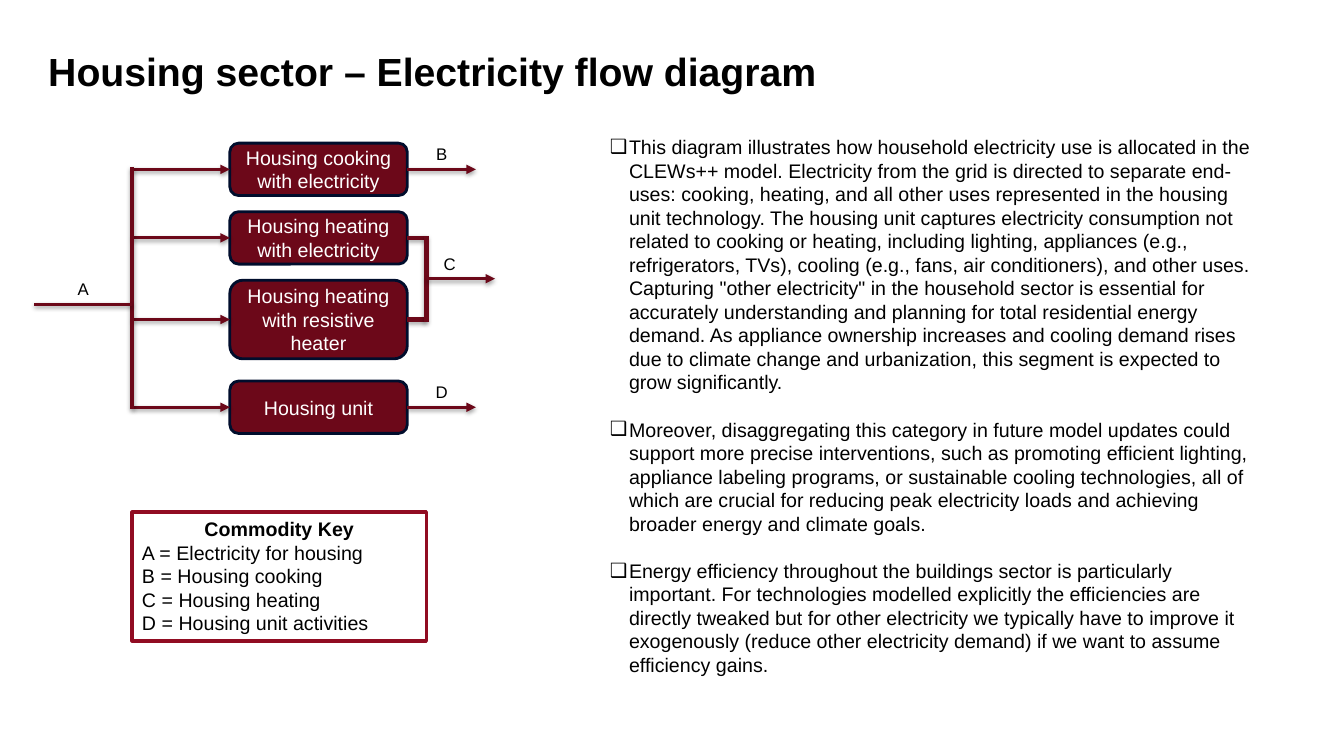
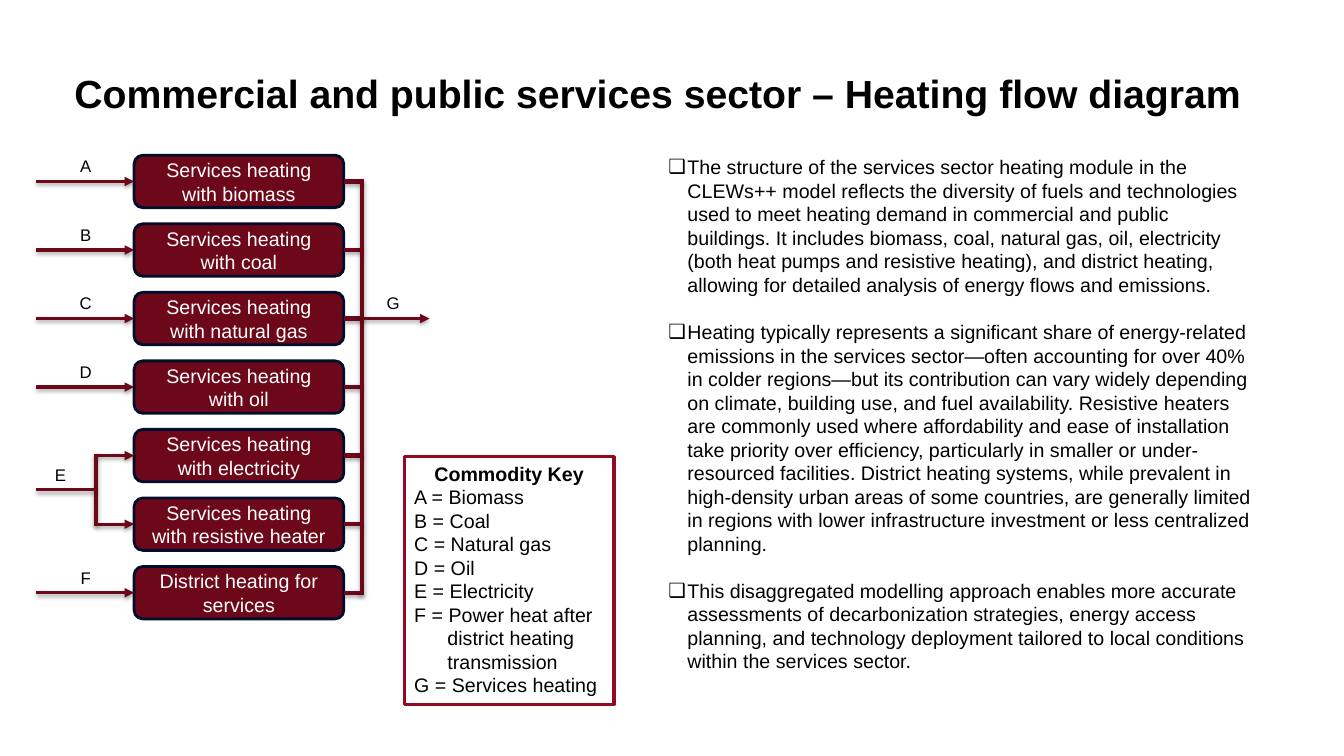
from lxml import etree
from pptx import Presentation
from pptx.dml.color import RGBColor
from pptx.enum.shapes import MSO_CONNECTOR, MSO_SHAPE
from pptx.enum.text import MSO_ANCHOR, PP_ALIGN
from pptx.oxml import parse_xml
from pptx.oxml.ns import nsdecls, qn
from pptx.util import Inches, Pt

STRAIGHT = MSO_CONNECTOR.STRAIGHT
RECT, ROUNDED = MSO_SHAPE.RECTANGLE, MSO_SHAPE.ROUNDED_RECTANGLE
LEFT, CENTER = PP_ALIGN.LEFT, PP_ALIGN.CENTER
TOP, MIDDLE, BOTTOM = MSO_ANCHOR.TOP, MSO_ANCHOR.MIDDLE, MSO_ANCHOR.BOTTOM
LEFT_SIDE, RIGHT_SIDE = 1, 3

FONT = "Arial"
BLACK, WHITE = "000000", "FFFFFF"
MAROON, NAVY, CRIMSON = "6C0819", "000D2C", "910C22"
THIN, THICK = 2.25, 3
BOX_HEIGHT, PITCH = 0.52, 0.68
LABEL_WIDTH, LABEL_HEIGHT = 0.72, 0.3
BULLET_INDENT, KEY_INDENT = 0.19, 0.33
PARAGRAPH_GAP = 16.8

HOUSING = {
    "title": ("Housing sector – Electricity flow diagram", (0.38, 0.16, 11.78, 0.83)),
    "notes_at": (5.95, 1.29, 6.69, 5.29),
    "notes": [
        "This diagram illustrates how household electricity use is allocated in the "
        "CLEWs++ model. Electricity from the grid is directed to separate end-uses: "
        "cooking, heating, and all other uses represented in the housing unit "
        "technology. The housing unit captures electricity consumption not related to "
        "cooking or heating, including lighting, appliances (e.g., refrigerators, TVs), "
        "cooling (e.g., fans, air conditioners), and other uses. Capturing \"other "
        "electricity\" in the household sector is essential for accurately "
        "understanding and planning for total residential energy demand. As appliance "
        "ownership increases and cooling demand rises due to climate change and "
        "urbanization, this segment is expected to grow significantly.",
        "Moreover, disaggregating this category in future model updates could support "
        "more precise interventions, such as promoting efficient lighting, appliance "
        "labeling programs, or sustainable cooling technologies, all of which are "
        "crucial for reducing peak electricity loads and achieving broader energy and "
        "climate goals.",
        "Energy efficiency throughout the buildings sector is particularly important. "
        "For technologies modelled explicitly the efficiencies are directly tweaked but "
        "for other electricity we typically have to improve it exogenously (reduce "
        "other electricity demand) if we want to assume efficiency gains.",
    ],
    "key_at": (1.31, 5.08, 2.92, 1.28),
    "key": ["A = Electricity for housing", "B = Housing cooking",
            "C = Housing heating", "D = Housing unit activities"],
    "boxes_at": (2.28, 1.76),
    "boxes": [  # label, top, height
        ("Housing cooking with electricity", 1.42, BOX_HEIGHT),
        ("Housing heating with electricity", 2.1, BOX_HEIGHT),
        ("Housing heating with resistive heater", 2.78, 0.78),
        ("Housing unit", 3.78, BOX_HEIGHT),
    ],
}

SERVICE_LABELS = [
    "Services heating with biomass", "Services heating with coal",
    "Services heating with natural gas", "Services heating with oil",
    "Services heating with electricity", "Services heating with resistive heater",
    "District heating for services",
]
SERVICES = {
    "title": ("Commercial and public services sector – Heating flow diagram",
              (0.64, 0.12, 11.91, 1.09)),
    "notes_at": (6.53, 1.49, 6.02, 5.29),
    "notes": [
        "The structure of the services sector heating module in the CLEWs++ model "
        "reflects the diversity of fuels and technologies used to meet heating demand "
        "in commercial and public buildings. It includes biomass, coal, natural gas, "
        "oil, electricity (both heat pumps and resistive heating), and district "
        "heating, allowing for detailed analysis of energy flows and emissions.",
        "Heating typically represents a significant share of energy-related emissions "
        "in the services sector—often accounting for over 40% in colder regions—but its "
        "contribution can vary widely depending on climate, building use, and fuel "
        "availability. Resistive heaters are commonly used where affordability and ease "
        "of installation take priority over efficiency, particularly in smaller or "
        "under-resourced facilities. District heating systems, while prevalent in "
        "high-density urban areas of some countries, are generally limited in regions "
        "with lower infrastructure investment or less centralized planning.",
        "This disaggregated modelling approach enables more accurate assessments of "
        "decarbonization strategies, energy access planning, and technology deployment "
        "tailored to local conditions within the services sector.",
    ],
    "key_at": (4.01, 4.53, 2.08, 2.46),
    "key": ["A = Biomass", "B = Coal", "C = Natural gas", "D = Oil", "E = Electricity",
            "F = Power heat after district heating transmission",
            "G = Services heating"],
    "boxes_at": (1.33, 2.08),
    "boxes": [(label, 1.54 + PITCH * row, BOX_HEIGHT)
              for row, label in enumerate(SERVICE_LABELS)],
}


def rgb(code):
    return RGBColor.from_string(code)


def inches(values):
    return [Inches(value) for value in values]


def hang(paragraph, indent, bullet=None):
    """Give a paragraph a hanging indent and, if asked, a bullet."""
    properties = paragraph._p.get_or_add_pPr()
    properties.set("marL", str(Inches(indent)))
    properties.set("indent", str(-Inches(indent)))
    if bullet:
        color = etree.SubElement(properties, qn("a:buClr"))
        etree.SubElement(color, qn("a:srgbClr"), val=BLACK)
        etree.SubElement(properties, qn("a:buFont"), typeface=FONT)
        etree.SubElement(properties, qn("a:buChar"), char=bullet)


def write(frame, lines, size=14, color=BLACK, bold=False, align=LEFT, anchor=TOP,
          spacing=None, gap=0, indent=0, bullet=None, heading=None):
    """Fill a text frame, one paragraph a line, below an optional bold heading."""
    frame.word_wrap = True
    frame.vertical_anchor = anchor
    rows = ([heading] if heading else []) + list(lines)
    for number, line in enumerate(rows):
        is_heading = bool(heading) and number == 0
        paragraph = frame.add_paragraph() if number else frame.paragraphs[0]
        if indent and not is_heading:
            hang(paragraph, indent, bullet)
        paragraph.alignment = CENTER if is_heading else align
        if spacing:
            paragraph.line_spacing = spacing
        if gap and number:
            paragraph.space_before = Pt(gap)
        run = paragraph.add_run()
        run.text = line
        run.font.name, run.font.size = FONT, Pt(size)
        run.font.bold = bold or is_heading
        run.font.color.rgb = rgb(color)


def add_text(slide, area, lines, **style):
    write(slide.shapes.add_textbox(*inches(area)).text_frame, lines, **style)


def add_panel(slide, kind, area, lines, line, width, fill=None, **style):
    panel = slide.shapes.add_shape(kind, *inches(area))
    panel.shadow.inherit = False
    if fill:
        panel.fill.solid()
        panel.fill.fore_color.rgb = rgb(fill)
    else:
        panel.fill.background()
    panel.line.color.rgb = rgb(line)
    panel.line.width = Pt(width)
    write(panel.text_frame, lines, **style)
    return panel


def middle(box):
    return (box.top + box.height / 2) / Inches(1)


def right(box):
    return (box.left + box.width) / Inches(1)


def add_line(slide, start, end, width=THIN, arrow=False, source=None, target=None):
    """Draw a shadowed line, joined to a source's right or a target's left side."""
    line = slide.shapes.add_connector(STRAIGHT, *inches(start + end))
    if source is not None:
        line.begin_connect(source, RIGHT_SIDE)
    if target is not None:
        line.end_connect(target, LEFT_SIDE)
    line.line.color.rgb = rgb(MAROON)
    line.line.width = Pt(width)
    properties = line._element.spPr
    if arrow:
        etree.SubElement(properties.find(qn("a:ln")), qn("a:tailEnd"), type="triangle")
    properties.append(parse_xml(
        f'<a:effectLst {nsdecls("a")}><a:outerShdw blurRad="40000" dist="20000" '
        f'dir="5400000" rotWithShape="0"><a:srgbClr val="{BLACK}">'
        '<a:alpha val="37000"/></a:srgbClr></a:outerShdw></a:effectLst>'))


def add_spine(slide, x, first, last):
    """Draw a vertical line that covers the corners of its outer branches."""
    overhang = 0.02
    add_line(slide, (x, first - overhang), (x, last + overhang), THICK)


def add_label(slide, letter, center, y):
    area = (center - LABEL_WIDTH / 2, y - LABEL_HEIGHT, LABEL_WIDTH, LABEL_HEIGHT)
    add_text(slide, area, [letter], size=12, align=CENTER)


def feed(slide, x, box):
    add_line(slide, (x, middle(box)), (right(box), middle(box)), arrow=True, target=box)


def gather(slide, boxes, x):
    """Join the right sides of several boxes to one spine."""
    for box in boxes:
        add_line(slide, (right(box), middle(box)), (x, middle(box)), THICK, source=box)
    add_spine(slide, x, middle(boxes[0]), middle(boxes[-1]))


def add_base(deck, content):
    """Add a slide with title, notes, key and boxes; return it with its boxes."""
    slide = deck.slides.add_slide(deck.slide_layouts[6])
    title, title_at = content["title"]
    add_text(slide, title_at, [title], size=28, bold=True, anchor=BOTTOM, spacing=0.9)
    add_text(slide, content["notes_at"], content["notes"], gap=PARAGRAPH_GAP,
             indent=BULLET_INDENT, bullet="❑")
    add_panel(slide, RECT, content["key_at"], content["key"], CRIMSON, 2.25,
              heading="Commodity Key", indent=KEY_INDENT)
    left, width = content["boxes_at"]
    boxes = [add_panel(slide, ROUNDED, (left, top, width, height), [label], NAVY, 2,
                       fill=MAROON, color=WHITE, align=CENTER, anchor=MIDDLE)
             for label, top, height in content["boxes"]]
    return slide, boxes


def build_housing(deck):
    slide, boxes = add_base(deck, HOUSING)
    cooking, *heating, unit = boxes
    supply, trunk, supply_y, outlet = 0.34, 1.31, 3.02, 0.68
    for box in boxes:
        feed(slide, trunk, box)
    add_spine(slide, trunk, middle(cooking), middle(unit))
    add_line(slide, (supply, supply_y), (trunk, supply_y))
    add_label(slide, "A", (supply + trunk) / 2, supply_y)

    for letter, box in (("B", cooking), ("D", unit)):
        start, y = right(box), middle(box)
        add_line(slide, (start, y), (start + outlet, y), arrow=True, source=box)
        add_label(slide, letter, start + outlet / 2, y)

    merge = 4.23
    gather(slide, heating, merge)
    y = sum(map(middle, heating)) / len(heating)
    add_line(slide, (merge, y), (merge + outlet, y), arrow=True)
    add_label(slide, "C", 4.46, y)


def build_services(deck):
    slide, boxes = add_base(deck, SERVICES)
    supply, fork, merge, outlet = 0.36, 0.95, 3.59, 0.67
    electric = boxes[4:6]
    single = boxes[:4] + boxes[6:]
    for letter, box in zip("ABCDF", single):
        feed(slide, supply, box)
        add_label(slide, letter, 0.85, middle(box))

    for box in electric:
        feed(slide, fork, box)
    add_spine(slide, fork, *map(middle, electric))
    y = sum(map(middle, electric)) / len(electric)
    add_line(slide, (supply, y), (fork, y))
    add_label(slide, "E", 0.6, y)

    gather(slide, boxes, merge)
    y = middle(boxes[2])
    add_line(slide, (merge, y), (merge + outlet, y), arrow=True)
    add_label(slide, "G", 3.9, y)


def main():
    deck = Presentation()
    deck.slide_width, deck.slide_height = inches((13.33, 7.5))
    build_housing(deck)
    build_services(deck)
    deck.save("out.pptx")


if __name__ == "__main__":
    main()
